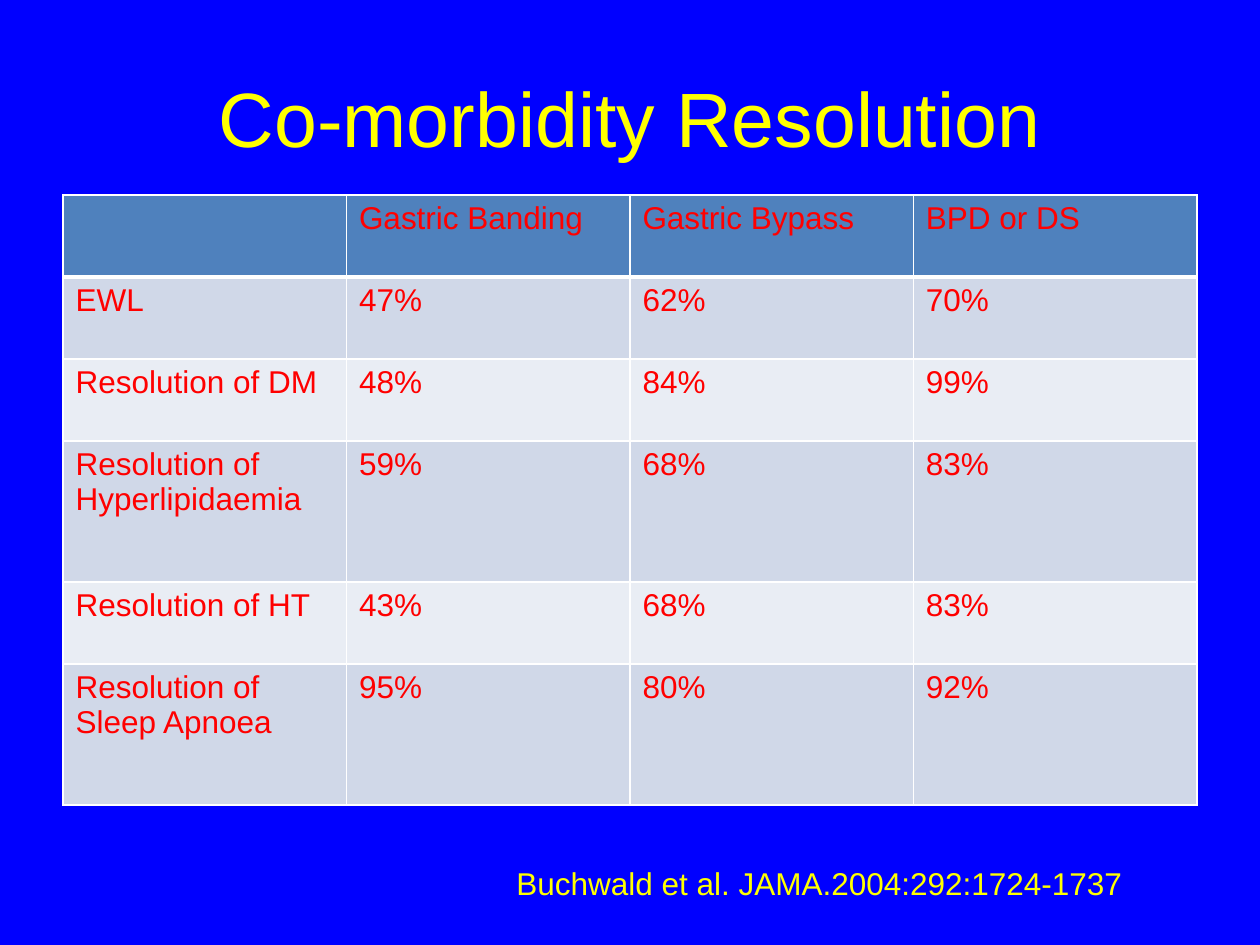
"""Build a slide that compares co-morbidity resolution after three operations."""
from lxml import etree
from pptx import Presentation
from pptx.dml.color import RGBColor
from pptx.enum.text import MSO_ANCHOR, MSO_AUTO_SIZE, PP_ALIGN
from pptx.oxml.ns import qn
from pptx.util import Pt

PX = 914400 // 126
MIDDLE = MSO_ANCHOR.MIDDLE
GROW = MSO_AUTO_SIZE.SHAPE_TO_FIT_TEXT
CENTER = PP_ALIGN.CENTER
LEFT = PP_ALIGN.LEFT

BLUE = RGBColor(0x00, 0x00, 0xFF)
YELLOW = RGBColor(0xFF, 0xFF, 0x00)
RED = RGBColor(0xFF, 0x00, 0x00)
WHITE = RGBColor(0xFF, 0xFF, 0xFF)
HEADER = RGBColor(0x4F, 0x81, 0xBD)
BANDS = (RGBColor(0xD0, 0xD8, 0xE8), RGBColor(0xE9, 0xED, 0xF4))

TITLE = {"name": "Arial", "size": Pt(44)}
BODY = {"name": "Arial", "size": Pt(18), "bold": False}

ROWS = (
    ("", "Gastric Banding", "Gastric Bypass", "BPD or DS"),
    ("EWL", "47%", "62%", "70%"),
    ("Resolution of DM", "48%", "84%", "99%"),
    ("Resolution of Hyperlipidaemia", "59%", "68%", "83%"),
    ("Resolution of HT", "43%", "68%", "83%"),
    ("Resolution of Sleep Apnoea", "95%", "80%", "92%"),
)
ROW_HEIGHTS = (82, 82, 82, 141, 82, 141)


class SlideBuilder:
    """Holds the style and the current slide."""

    def __init__(self, presentation):
        self.slide = presentation.slides.add_slide(presentation.slide_layouts[5])
        background = self.slide.background.fill
        background.solid()
        background.fore_color.rgb = BLUE

    def fill_text(self, text_frame, text, style, color, alignment=LEFT):
        paragraph = text_frame.paragraphs[0]
        paragraph.alignment = alignment
        if text:
            run = paragraph.add_run()
            run.text = text
            for name, value in style.items():
                setattr(run.font, name, value)
            run.font.color.rgb = color

    def title(self, text, left, top, width, height):
        shape = self.slide.shapes.title
        place = {"left": left, "top": top, "width": width, "height": height}
        for name, value in place.items():
            setattr(shape, name, value * PX)
        shape.text_frame.vertical_anchor = MIDDLE
        self.fill_text(shape.text_frame, text, TITLE, YELLOW, CENTER)

    def text(self, text, left, top, width, height):
        box = (value * PX for value in (left, top, width, height))
        text_frame = self.slide.shapes.add_textbox(*box).text_frame
        text_frame.word_wrap = True
        text_frame.auto_size = GROW
        self.fill_text(text_frame, text, BODY, YELLOW)

    def borders(self, cell, bottom):
        properties = cell._tc.get_or_add_tcPr()
        for side, points in {"L": 1, "R": 1, "T": 1, "B": bottom}.items():
            line = etree.SubElement(properties, qn(f"a:ln{side}"), w=str(Pt(points)))
            fill = etree.SubElement(line, qn("a:solidFill"))
            etree.SubElement(fill, qn("a:srgbClr"), val=str(WHITE))

    def table(self, rows, heights, left, top, width):
        box = (value * PX for value in (left, top, width, sum(heights)))
        table = self.slide.shapes.add_table(len(rows), len(rows[0]), *box).table
        for row_index, (texts, height) in enumerate(zip(rows, heights)):
            table.rows[row_index].height = height * PX
            is_header = row_index == 0
            color = HEADER if is_header else BANDS[(row_index - 1) % 2]
            for column_index, text in enumerate(texts):
                cell = table.cell(row_index, column_index)
                self.borders(cell, 3 if is_header else 1)
                cell.fill.solid()
                cell.fill.fore_color.rgb = color
                self.fill_text(cell.text_frame, text, BODY, RED)


def main():
    presentation = Presentation()
    presentation.slide_width = 1260 * PX
    presentation.slide_height = 945 * PX
    builder = SlideBuilder(presentation)
    builder.title("Co-morbidity Resolution", 63, 38, 1134, 157)
    builder.table(ROWS, ROW_HEIGHTS, 63, 195, 1134)
    builder.text("Buchwald et al. JAMA.2004:292:1724-1737", 504, 858, 693, 50)
    presentation.save("out.pptx")


if __name__ == "__main__":
    main()
